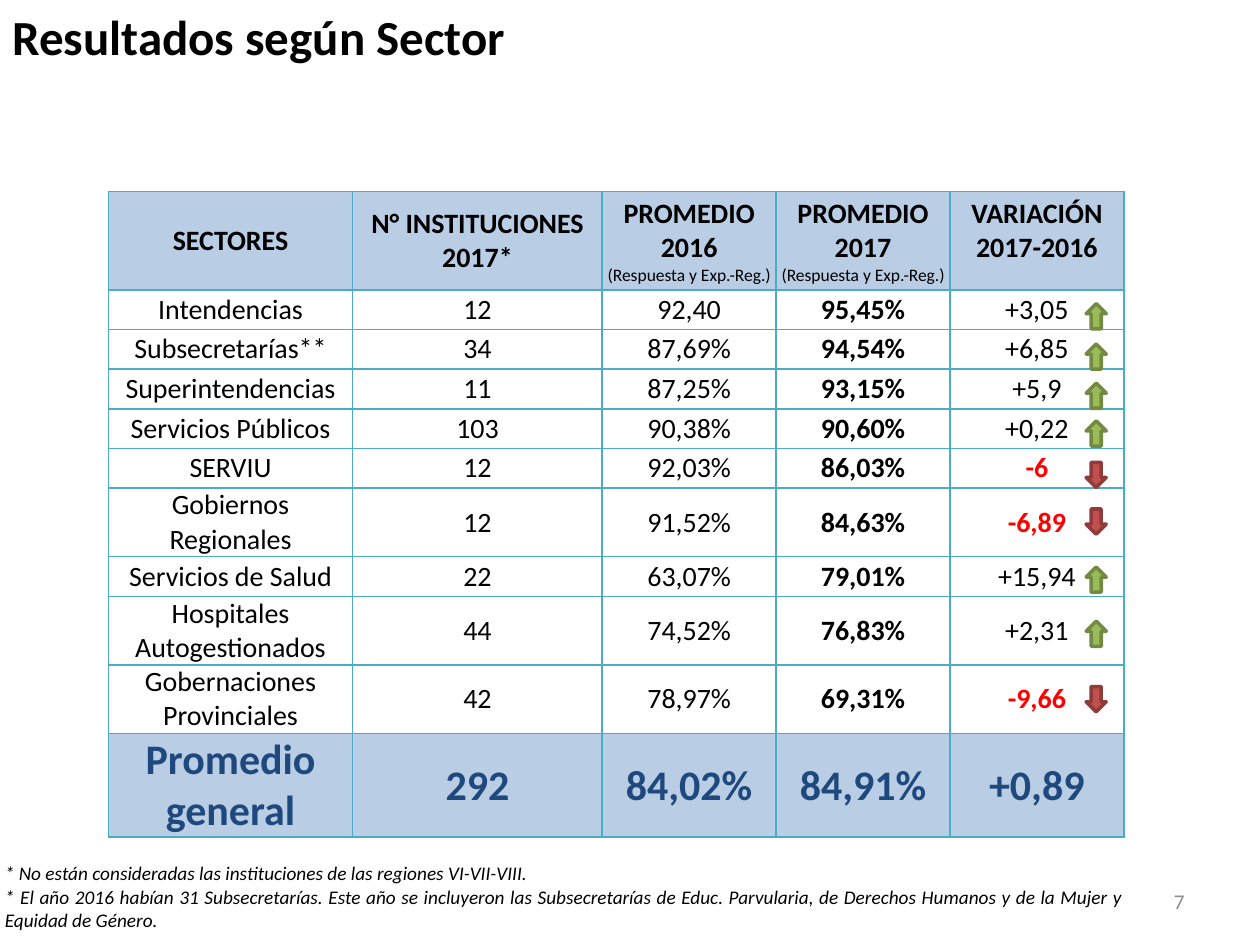
"""Build the slide of survey results by sector, with a table and trend arrows."""
from lxml import etree
from pptx import Presentation
from pptx.dml.color import RGBColor
from pptx.enum.shapes import MSO_SHAPE
from pptx.enum.text import MSO_ANCHOR, PP_ALIGN
from pptx.oxml.ns import qn
from pptx.util import Inches, Pt

DOWN_ARROW = MSO_SHAPE.DOWN_ARROW
MIDDLE, TOP = MSO_ANCHOR.MIDDLE, MSO_ANCHOR.TOP
LEFT, CENTER, RIGHT, JUSTIFY = PP_ALIGN.LEFT, PP_ALIGN.CENTER, PP_ALIGN.RIGHT, PP_ALIGN.JUSTIFY
COLORS = {
    "black": "000000", "white": "FFFFFF", "red": "FF0000", "gray": "8C8C8C",
    "navy": "1F497D", "band": "B9CDE5", "border": "4BACC6",
    "rise": "9BBB59", "rise_line": "738A42", "fall": "C0504D", "fall_line": "8E3B39",
}
FORMATS = {
    "title": {"size": Pt(28), "bold": True},
    "footnote": {"size": Pt(11), "italic": True},
    "number": {"size": Pt(12)},
    "header": {"size": Pt(16), "bold": True},
    "detail": {"size": Pt(10), "bold": False},
    "plain": {"size": Pt(16), "bold": False},
    "strong": {"size": Pt(16), "bold": True},
    "total": {"size": Pt(24), "bold": True},
}

presentation = Presentation()
presentation.slide_width, presentation.slide_height = Inches(10), Inches(7.5)
slide = presentation.slides.add_slide(presentation.slide_layouts[6])
grid_cell = presentation.slide_width // 100


def grid(*counts):
    return [round(count * grid_cell) for count in counts]


def style(paragraph, format_name, color, alignment):
    paragraph.alignment = alignment
    font = paragraph.font if not paragraph.runs else paragraph.runs[0].font
    font.name = "Calibri"
    font.color.rgb = RGBColor.from_string(COLORS[color])
    for attribute, value in FORMATS[format_name].items():
        setattr(font, attribute, value)


header = [
    "SECTORES", "N° INSTITUCIONES 2017*", "PROMEDIO 2016\n(Respuesta y Exp.-Reg.)",
    "PROMEDIO 2017\n(Respuesta y Exp.-Reg.)", "VARIACIÓN 2017-2016",
]
sectors = [
    ["Intendencias", "12", "92,40", "95,45%", "+3,05"],
    ["Subsecretarías**", "34", "87,69%", "94,54%", "+6,85"],
    ["Superintendencias", "11", "87,25%", "93,15%", "+5,9"],
    ["Servicios Públicos", "103", "90,38%", "90,60%", "+0,22"],
    ["SERVIU", "12", "92,03%", "86,03%", "-6"],
    ["Gobiernos Regionales", "12", "91,52%", "84,63%", "-6,89"],
    ["Servicios de Salud", "22", "63,07%", "79,01%", "+15,94"],
    ["Hospitales Autogestionados", "44", "74,52%", "76,83%", "+2,31"],
    ["Gobernaciones Provinciales", "42", "78,97%", "69,31%", "-9,66"],
]
total = ["Promedio general", "292", "84,02%", "84,91%", "+0,89"]
rows = [header, *sectors, total]
column_widths = grid(19.4, 19.8, 13.8, 13.8, 13.8)
row_heights = grid(7.8, 3.15, 3.15, 3.15, 3.15, 3.15, 5.4, 3.15, 5.4, 5.4, 8.2)

table = slide.shapes.add_table(
    len(rows), len(header), *grid(8.6, 15.2), sum(column_widths), sum(row_heights)
).table
table.first_row = table.horz_banding = False
for column, width in zip(table.columns, column_widths):
    column.width = width
for row, height in zip(table.rows, row_heights):
    row.height = height

for row_index, values in enumerate(rows):
    is_sector = values in sectors
    for column_index, value in enumerate(values):
        cell = table.cell(row_index, column_index)
        cell.text = value
        cell.vertical_anchor = MIDDLE
        inset = 0 if is_sector else grid_cell // 10
        cell.margin_left = cell.margin_right = cell.margin_top = inset
        cell.margin_bottom = 0
        properties = cell._tc.get_or_add_tcPr()
        for side in ("a:lnL", "a:lnR", "a:lnT", "a:lnB"):
            border = etree.SubElement(properties, qn(side), w=str(Pt(1)))
            border_fill = etree.SubElement(border, qn("a:solidFill"))
            etree.SubElement(border_fill, qn("a:srgbClr"), val=COLORS["border"])
        cell.fill.solid()
        cell.fill.fore_color.rgb = RGBColor.from_string(COLORS["white" if is_sector else "band"])

        format_name, color = "plain", "black"
        if values is header:
            format_name = "header"
        elif values is total:
            format_name, color = "total", "navy"
        elif value.startswith("-"):
            format_name, color = "strong", "red"
        elif column_index == 3:
            format_name = "strong"
        for line, paragraph in enumerate(cell.text_frame.paragraphs):
            style(paragraph, "detail" if line else format_name, color, CENTER)
table.cell(0, len(header) - 1).margin_bottom = grid(1.6)[0]

arrow_tops = [24.1, 27.3, 30.4, 33.4, 36.7, 40.4, 45, 49.3, 54.5]
for sector, top in zip(sectors, arrow_tops):
    trend = "fall" if sector[-1].startswith("-") else "rise"
    arrow = slide.shapes.add_shape(DOWN_ARROW, *grid(86.2, top, 1.6, 2))
    arrow.rotation = 180 if trend == "rise" else 0
    arrow.shadow.inherit = False
    arrow.fill.solid()
    arrow.fill.fore_color.rgb = RGBColor.from_string(COLORS[trend])
    arrow.line.color.rgb = RGBColor.from_string(COLORS[trend + "_line"])
    arrow.line.width = Pt(2)

footnotes = (
    "* No están consideradas las instituciones de las regiones VI-VII-VIII.\n"
    "* El año 2016 habían 31 Subsecretarías. Este año se incluyeron las Subsecretarías "
    "de Educ. Parvularia, de Derechos Humanos y de la Mujer y Equidad de Género."
)
texts = [
    ("Resultados según Sector", (0, 0, 98.8, 5.7), "title", "black", LEFT, TOP),
    (footnotes, (-0.6, 67.9, 90.8, 6.6), "footnote", "black", JUSTIFY, TOP),
    ("7", (71.7, 69.5, 23.3, 4), "number", "gray", RIGHT, MIDDLE),
]
for text, place, format_name, color, alignment, anchor in texts:
    frame = slide.shapes.add_textbox(*grid(*place)).text_frame
    frame.word_wrap = True
    frame.vertical_anchor = anchor
    frame.text = text
    for paragraph in frame.paragraphs:
        style(paragraph, format_name, color, alignment)

presentation.save("out.pptx")
